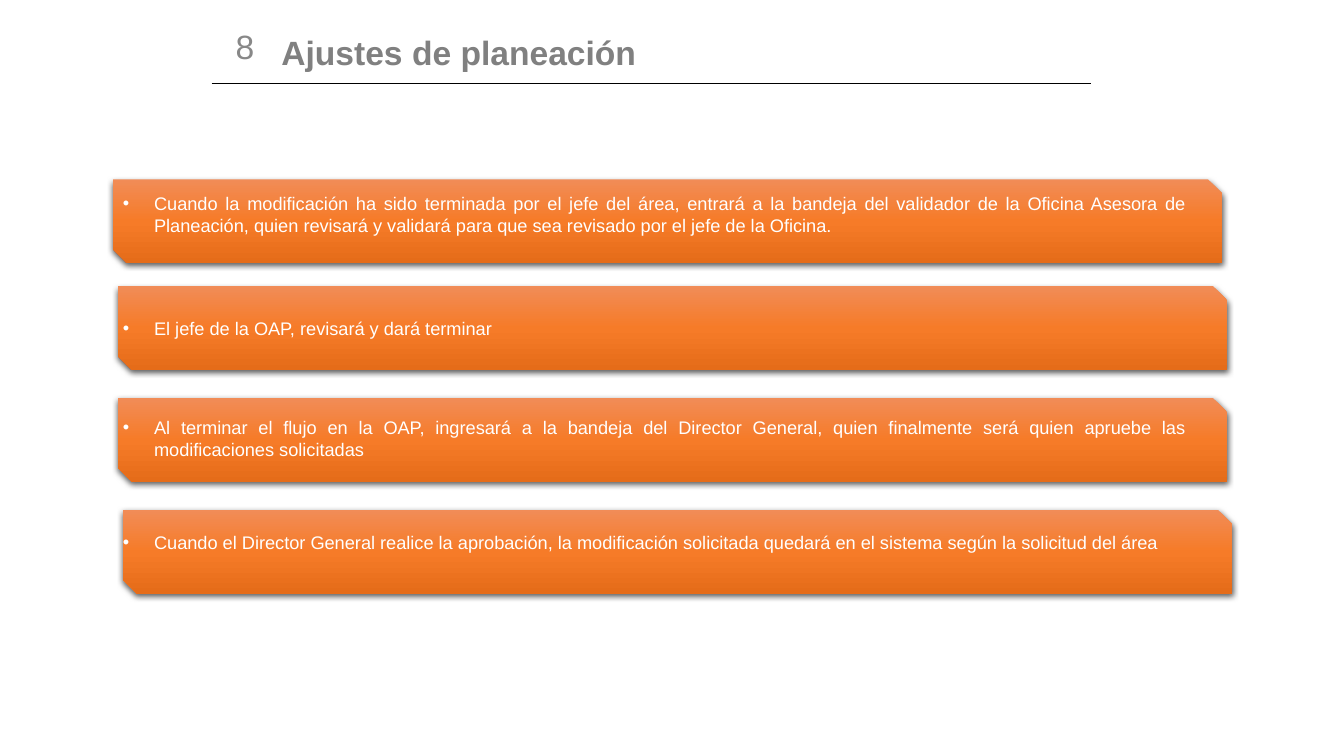
from dataclasses import dataclass

from lxml.etree import SubElement
from pptx import Presentation
from pptx.dml.color import RGBColor
from pptx.enum.shapes import MSO_CONNECTOR as Link, MSO_SHAPE as Form
from pptx.enum.text import MSO_ANCHOR as Anchor, MSO_AUTO_SIZE as Fit, PP_ALIGN as Align
from pptx.oxml import parse_xml
from pptx.oxml.ns import nsdecls, qn
from pptx.util import Emu, Pt

SCALE = 9144
BAR_W, BAR_H = 1100, 83
NOTE_X, NOTE_W = 112, 1073
INDENT = 31
STOPS = ((0, "F18C57"), (50, "F67B28"), (100, "E56C19"))


@dataclass
class Step:
    """A bar and the note that lies on it."""
    left: int
    top: int
    note_top: int
    note_h: int
    text: str


STEPS = (
    Step(112, 178, 186, 76, "Cuando la modificación ha sido terminada por el jefe del área, entrará a la "
         "bandeja del validador de la Oficina Asesora de Planeación, quien revisará y validará para que "
         "sea revisado por el jefe de la Oficina."),
    Step(117, 284, 310, 32, "El jefe de la OAP, revisará y dará terminar"),
    Step(117, 395, 408, 54, "Al terminar el flujo en la OAP, ingresará a la bandeja del Director General, "
         "quien finalmente será quien apruebe las modificaciones solicitadas"),
    Step(122, 506, 522, 32, "Cuando el Director General realice la aprobación, la modificación solicitada "
         "quedará en el sistema según la solicitud del área"),
)


def px(size: int) -> Emu:
    """Turn px into EMU."""
    return Emu(size * SCALE)


def tint(code: str) -> RGBColor:
    """Turn a hex string into a colour."""
    return RGBColor.from_string(code)


def place(shape, left: int, top: int, width: int, height: int) -> None:
    """Move and size a shape."""
    shape.left, shape.top = px(left), px(top)
    shape.width, shape.height = px(width), px(height)


def write(shape, text: str, *, size: int, color: str, align=Align.LEFT, bold: bool = False,
          lines: float = 1.0, anchor=Anchor.TOP, fit=Fit.NONE, bullet: bool = False) -> None:
    """Put formatted text in a shape."""
    frame = shape.text_frame
    frame.word_wrap = True
    frame.auto_size = fit
    frame.vertical_anchor = anchor
    frame.text = text
    para = frame.paragraphs[0]
    props = para._p.get_or_add_pPr()
    indent = px(INDENT) if bullet else 0
    props.set("marL", str(indent))
    props.set("indent", str(-indent))
    if bullet:
        SubElement(props, qn("a:buFont"), typeface="Arial")
        SubElement(props, qn("a:buChar"), char="•")
    else:
        SubElement(props, qn("a:buNone"))
    para.alignment = align
    para.line_spacing = lines
    para.space_before = Pt(0)
    font = para.runs[0].font
    font.name, font.size, font.bold = "Arial", Pt(size), bold
    font.color.rgb = tint(color)


def draw_bar(slide, step: Step) -> None:
    """Draw a shaded bar with cut corners."""
    bar = slide.shapes.add_shape(Form.SNIP_2_DIAG_RECTANGLE, px(step.left), px(step.top),
                                 px(BAR_W), px(BAR_H))
    bar.line.fill.background()
    bar.shadow.inherit = False
    props = bar._element.spPr
    stops = "".join(f'<a:gs pos="{pos * 1000}"><a:srgbClr val="{code}"/></a:gs>'
                    for pos, code in STOPS)
    props.find(qn("a:ln")).addprevious(parse_xml(
        f'<a:gradFill {nsdecls("a")} rotWithShape="1"><a:gsLst>{stops}</a:gsLst>'
        '<a:lin ang="5400000" scaled="0"/></a:gradFill>'))
    props.find(qn("a:effectLst")).append(parse_xml(
        f'<a:outerShdw {nsdecls("a")} blurRad="{Pt(4.5)}" dist="{Pt(1.5)}" dir="5400000" '
        'algn="ctr" rotWithShape="0"><a:srgbClr val="000000"><a:alpha val="63000"/>'
        '</a:srgbClr></a:outerShdw>'))


def draw_note(slide, step: Step) -> None:
    """Write the bulleted note of a step."""
    box = slide.shapes.add_textbox(px(NOTE_X), px(step.note_top), px(NOTE_W), px(step.note_h))
    write(box, step.text, size=13, color="FFFFFF", align=Align.JUSTIFY,
          fit=Fit.SHAPE_TO_FIT_TEXT, bullet=True)


def draw_rule(slide) -> None:
    """Draw the line under the title."""
    rule = slide.shapes.add_connector(Link.STRAIGHT, px(210), px(83), px(1082), px(83))
    rule.line.color.rgb = tint("000000")
    rule.line.width = Pt(1)
    SubElement(rule._element.spPr, qn("a:effectLst"))


def main() -> None:
    """Build the slide and save it."""
    deck = Presentation()
    deck.slide_width, deck.slide_height = px(1333), px(750)
    slide = deck.slides.add_slide(deck.slide_layouts[1])
    title, number = slide.placeholders
    place(title, 269, 26, 813, 57)
    write(title, "Ajustes de planeación", size=24, color="808080", bold=True, lines=0.9,
          anchor=Anchor.MIDDLE)
    place(number, 209, 25, 68, 58)
    write(number, "8", size=24, color="888888", align=Align.CENTER, lines=0.9)
    draw_rule(slide)
    for step in STEPS:
        draw_bar(slide, step)
        draw_note(slide, step)
    deck.save("out.pptx")


if __name__ == "__main__":
    main()
